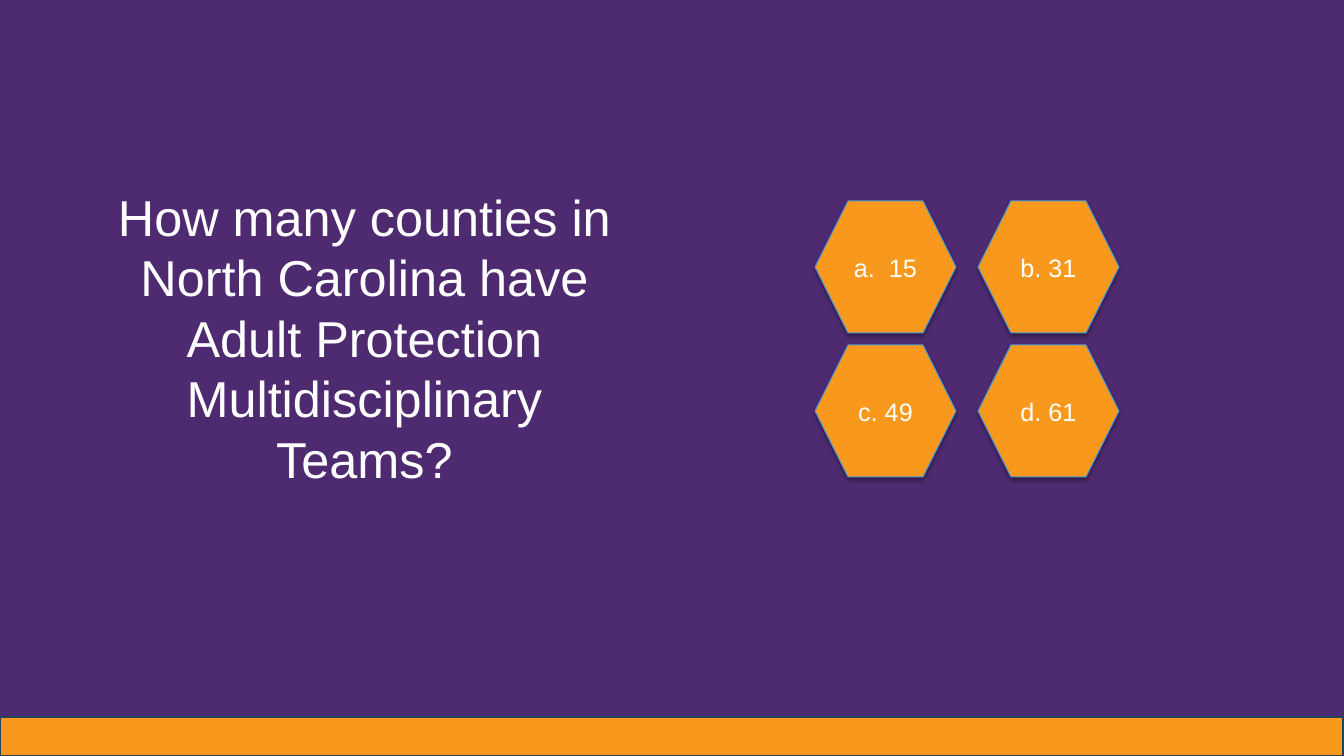
import pptx
import pptx.util
import pptx.dml.color
import pptx.enum.shapes
import pptx.enum.text
import lxml.etree

PX = 914400 / 100.8
ORANGE = "F8991D"
WHITE = "FFFFFF"
DRAWING = "{http://schemas.openxmlformats.org/drawingml/2006/main}"


def px(*lengths):
    return [round(length * PX) for length in lengths]


def paint(target, color):
    if hasattr(target, "solid"):
        target.solid()
        target = target.fore_color
    target.rgb = pptx.dml.color.RGBColor.from_string(color)


deck = pptx.Presentation()
deck.slide_width, deck.slide_height = px(1344, 756)
slide = deck.slides.add_slide(deck.slide_layouts[5])

question = slide.shapes.title
backdrop = slide.shapes.add_shape(
    pptx.enum.shapes.MSO_SHAPE.RECTANGLE, *px(0, 0, 1344, 745))
backdrop.shadow.inherit = False
paint(backdrop.fill, "4E2A70")
backdrop.line.fill.background()
question.element.addprevious(backdrop.element)

question.left, question.top, question.width, question.height = px(108, 181, 513, 316)
question.text_frame.text = "How many counties in North Carolina have Adult Protection Multidisciplinary Teams?"
question.text_frame.margin_left, question.text_frame.margin_right = px(5, 5)
question.text_frame.word_wrap = True
question.text_frame.auto_size = pptx.enum.text.MSO_AUTO_SIZE.NONE
question.text_frame.vertical_anchor = pptx.enum.text.MSO_ANCHOR.TOP
wording = question.text_frame.paragraphs[0]
wording.alignment = pptx.enum.text.PP_ALIGN.CENTER
wording.line_spacing = pptx.util.Pt(43.2)
wording.font.name = "Arial"
wording.font.size = pptx.util.Pt(36)
paint(wording.font.color, WHITE)

for index, choice in enumerate(["a.  15", "b. 31", "c. 49", "d. 61"]):
    row, column = divmod(index, 2)
    answer = slide.shapes.add_shape(
        pptx.enum.shapes.MSO_SHAPE.HEXAGON,
        *px(815 + 163 * column, 201 + 144 * row, 141, 132))
    paint(answer.fill, ORANGE)
    paint(answer.line.fill, "4699D2")
    answer.line.width = pptx.util.Pt(0.75)

    answer.shadow.inherit = False
    effects = answer.element.spPr.find(DRAWING + "effectLst")
    shadow = lxml.etree.SubElement(
        effects, DRAWING + "outerShdw", blurRad=str(pptx.util.Pt(3.1)),
        dist=str(pptx.util.Pt(1.8)), dir="5400000", rotWithShape="0")
    shade = lxml.etree.SubElement(shadow, DRAWING + "srgbClr", val="000000")
    lxml.etree.SubElement(shade, DRAWING + "alpha", val="35000")

    answer.text_frame.text = choice
    answer.text_frame.word_wrap = True
    answer.text_frame.vertical_anchor = pptx.enum.text.MSO_ANCHOR.MIDDLE
    label = answer.text_frame.paragraphs[0]
    label.alignment = pptx.enum.text.PP_ALIGN.CENTER
    label.font.name = "Arial"
    label.font.size = pptx.util.Pt(18)
    paint(label.font.color, WHITE)

footer = slide.shapes.add_shape(
    pptx.enum.shapes.MSO_SHAPE.RECTANGLE, *px(0, 717, 1343, 39))
footer.shadow.inherit = False
paint(footer.fill, ORANGE)
paint(footer.line.fill, "21445C")
footer.line.width = pptx.util.Pt(2)

deck.save("out.pptx")
